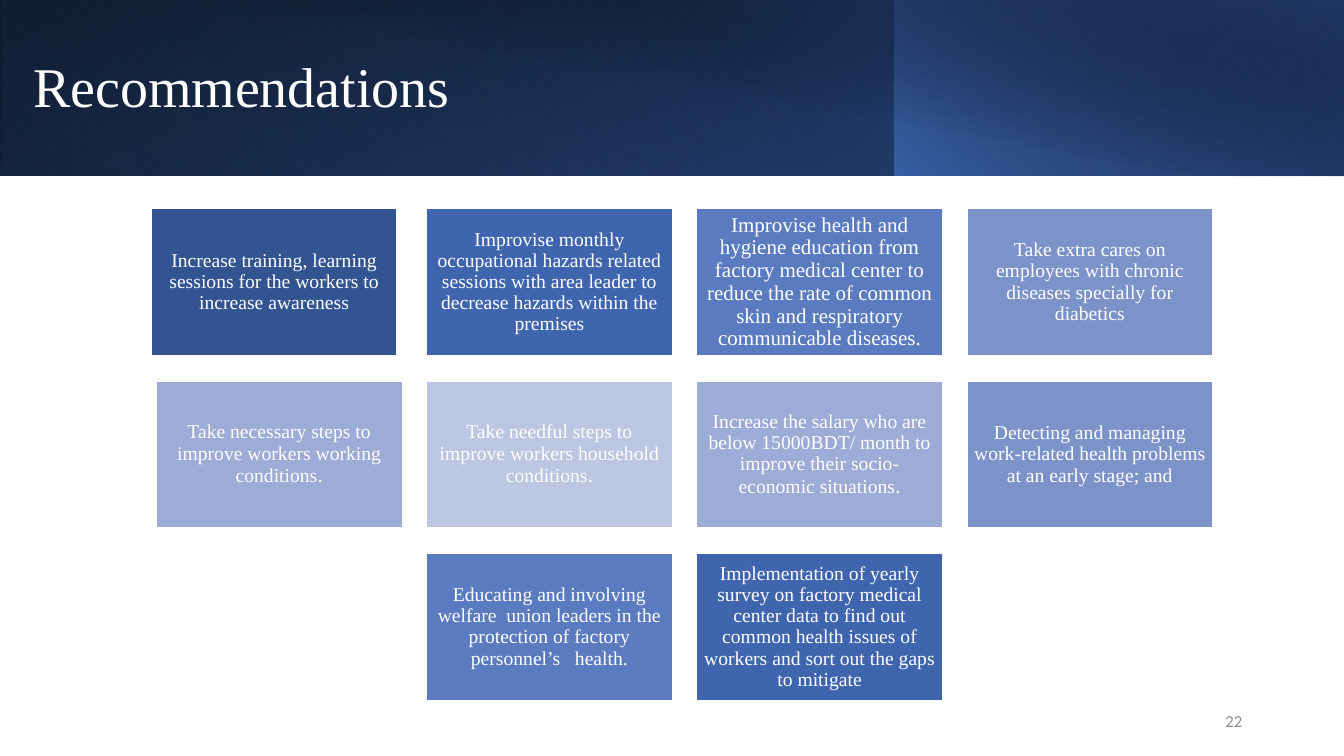
from lxml import etree
from pptx import Presentation, util as u
from pptx.dml.color import RGBColor
from pptx.enum import shapes, text
from pptx.oxml import ns

COLORS = {
    "white": "FFFFFF", "black": "000000", "number": "8C8C8C",
    "base": "2F5597", "accent": "4472C4", "navy": "203864",
    "tone1": "325491", "tone2": "4065AF", "tone3": "5B7BC0",
    "tone4": "7C93CA", "tone5": "9DACD6", "tone6": "BCC6E2",
}

deck = Presentation()
deck.slide_width, deck.slide_height = u.Inches(13.33), u.Inches(7.5)
slide = deck.slides.add_slide(deck.slide_layouts[6])


def write(holder, runs, size=14, font="Times New Roman", color="white",
          align=text.PP_ALIGN.LEFT, spacing=0.9, inset=None):
    frame = holder.text_frame
    frame.word_wrap = True
    frame.vertical_anchor = text.MSO_ANCHOR.MIDDLE
    if inset is not None:
        frame.margin_left = frame.margin_right = u.Inches(inset)
        frame.margin_top = frame.margin_bottom = u.Inches(inset)
    paragraph = frame.paragraphs[0]
    paragraph.alignment = align
    paragraph.line_spacing = spacing
    for words, *style in runs:
        run = paragraph.add_run()
        run.text = words
        run_size, run_font = style or (size, font)
        run.font.size = u.Pt(run_size)
        run.font.name = run_font
        run.font.color.rgb = RGBColor.from_string(COLORS[color])


def add_rect(left, top, width, height):
    rect = slide.shapes.add_shape(
        shapes.MSO_SHAPE.RECTANGLE,
        u.Inches(left), u.Inches(top), u.Inches(width), u.Inches(height))
    rect.shadow.inherit = False
    return rect


banner_layers = [
    (0, 13.33, 1.74, 0, True, 140, [(0, "black", 100), (100, "base", 100)]),
    (0, 8.88, 1.74, 180, True, 230, [(20, "accent", 0), (100, "navy", 55)]),
    (8.87, 4.46, 1.74, 0, True, 220, [(0, "accent", 66), (100, "black", 30)]),
    (0.5, 12.83, 1.75, 0, False, 280, [(50, "black", 0), (99, "navy", 52)]),
]
for left, width, height, turn, flipped, angle, stops in banner_layers:
    layer = add_rect(left, 0, width, height)
    layer.rotation = turn
    layer.line.fill.background()
    layer.fill.background()
    properties = layer.element.spPr
    if flipped:
        properties.find(ns.qn("a:xfrm")).set("flipH", "1")
    gradient = etree.Element(ns.qn("a:gradFill"), rotWithShape="1")
    stop_list = etree.SubElement(gradient, ns.qn("a:gsLst"))
    for position, color, opacity in stops:
        stop = etree.SubElement(stop_list, ns.qn("a:gs"), pos=str(position * 1000))
        tint = etree.SubElement(stop, ns.qn("a:srgbClr"), val=COLORS[color])
        etree.SubElement(tint, ns.qn("a:alpha"), val=str(opacity * 1000))
    etree.SubElement(gradient, ns.qn("a:lin"), ang=str(angle * 60000), scaled="0")
    properties.replace(properties.find(ns.qn("a:noFill")), gradient)

title = slide.shapes.add_textbox(
    u.Inches(0.23), u.Inches(0.32), u.Inches(12.09), u.Inches(1.13))
write(title, [("Recommendations",)], size=40)

full_stop = (".", 15, "Calibri")
cards = [
    (0, 0, "tone1", [("Increase training, learning sessions for the workers to increase awareness",)]),
    (0, 1, "tone2", [("Improvise monthly occupational hazards related sessions with area leader to decrease hazards within the premises",)]),
    (0, 2, "tone3", [("Improvise health and hygiene education from factory medical center to reduce the rate of common skin and respiratory communicable diseases.", 15, "Times New Roman")]),
    (0, 3, "tone4", [("Take extra cares on employees with chronic diseases specially for diabetics",)]),
    (1, 0, "tone5", [("Take necessary steps to improve workers working conditions",), full_stop]),
    (1, 1, "tone6", [("Take needful steps to improve workers household conditions",), full_stop]),
    (1, 2, "tone5", [("Increase the salary who are below 15000BDT/ month to improve their socio-economic situations",), full_stop]),
    (1, 3, "tone4", [("Detecting and managing work-related health problems at an early stage; and",)]),
    (2, 1, "tone3", [("Educating and involving welfare  union leaders in the protection of factory personnel’s   health.",)]),
    (2, 2, "tone2", [("Implementation of yearly survey on factory medical center data to find out common health issues of workers and sort out the gaps to mitigate",)]),
]
for row, column, tone, advice in cards:
    nudge = 0.05 if row == column == 0 else 0
    card = add_rect(1.55 + 2.68 * column - nudge, 2.07 + 1.71 * row, 2.44, 1.46)
    card.fill.solid()
    card.fill.fore_color.rgb = RGBColor.from_string(COLORS[tone])
    card.line.color.rgb = RGBColor.from_string(COLORS["white"])
    card.line.width = u.Pt(1)
    write(card, advice, align=text.PP_ALIGN.CENTER, inset=0.06)

page_number = slide.shapes.add_textbox(
    u.Inches(9.42), u.Inches(6.95), u.Inches(3), u.Inches(0.4))
write(page_number, [("22",)], size=12, font="Calibri", color="number",
      align=text.PP_ALIGN.RIGHT, spacing=1.0)

deck.save("out.pptx")
